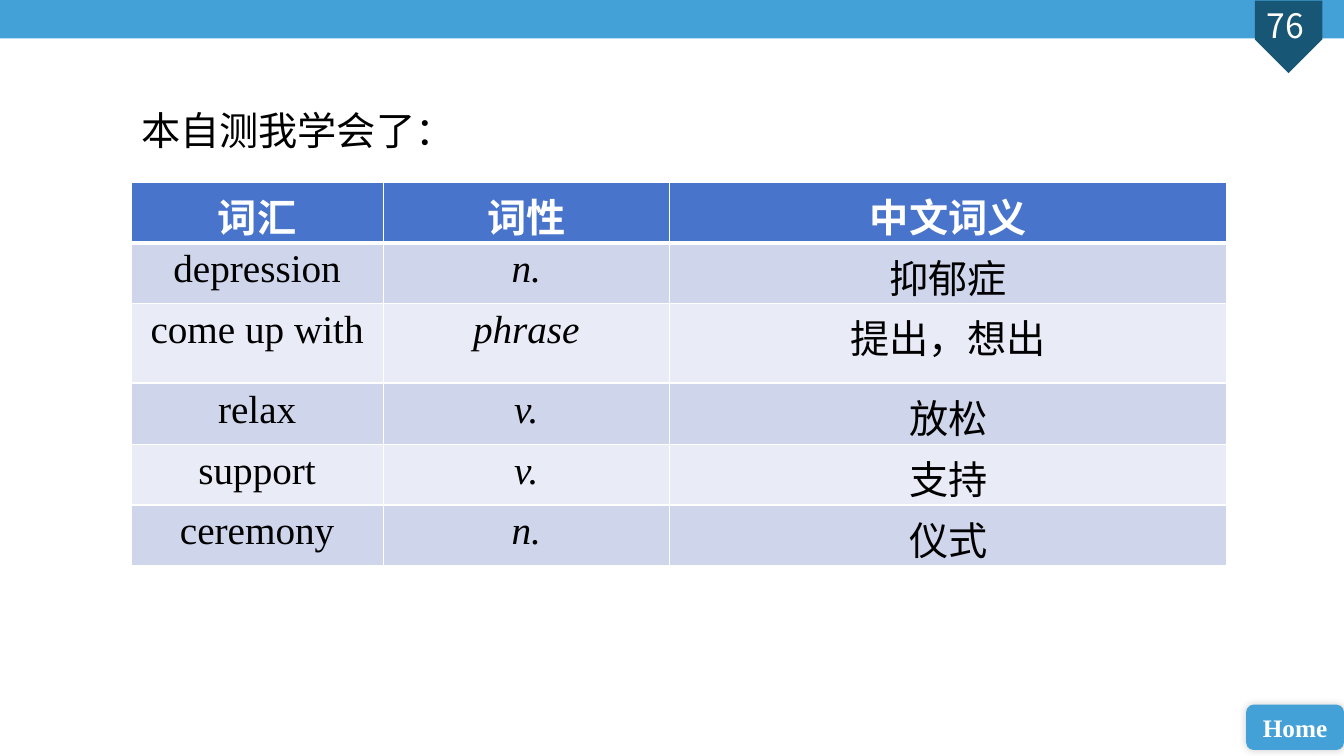
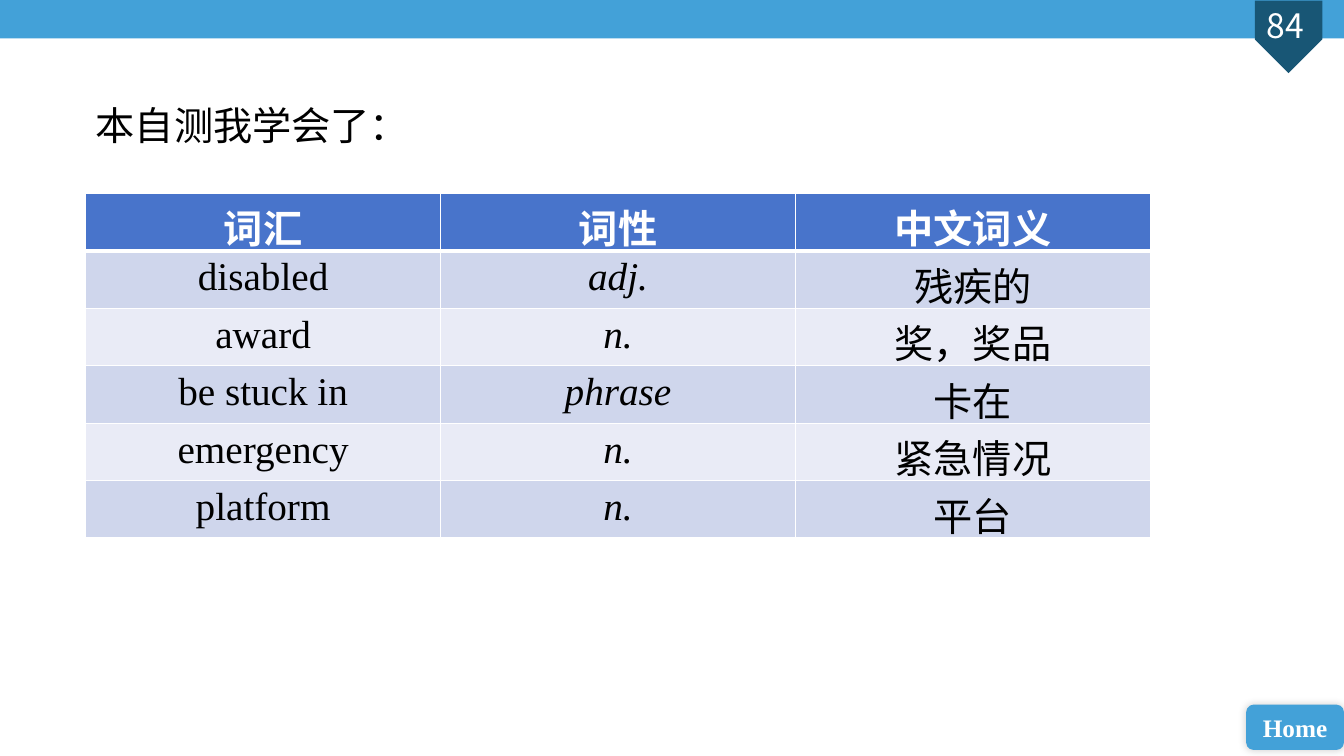
from dataclasses import dataclass

import pptx
import pptx.dml.color
import pptx.enum.shapes
import pptx.enum.text
import pptx.oxml
import pptx.oxml.ns
import pptx.util
from pptx.dml.color import RGBColor
from pptx.util import Inches

SKY = RGBColor(0x43, 0xA1, 0xD8)
NAVY = RGBColor(0x18, 0x56, 0x75)
HEADER_BLUE = RGBColor(0x48, 0x74, 0xCB)
DARK_STRIPE = RGBColor(0xCF, 0xD6, 0xEC)
LIGHT_STRIPE = RGBColor(0xE9, 0xEB, 0xF6)
WHITE = RGBColor(0xFF, 0xFF, 0xFF)
BLACK = RGBColor(0x00, 0x00, 0x00)

SERIF = "Times New Roman"
SANS = "Calibri"
CHINESE = "Noto Sans CJK SC"

TITLE = "本自测我学会了："
HEADERS = ("词汇", "词性", "中文词义")
PART_OF_SPEECH = 1

SHAPE = pptx.enum.shapes.MSO_SHAPE
ALIGN = pptx.enum.text.PP_ALIGN
ANCHOR = pptx.enum.text.MSO_ANCHOR


@dataclass(frozen=True)
class Box:
    left: float
    top: float
    width: float
    height: float

    def lengths(self) -> tuple:
        return tuple(Inches(value) for value in (self.left, self.top, self.width, self.height))


@dataclass(frozen=True)
class VocabularyPage:
    number: int
    title_left: float
    title_top: float
    table_top: float
    column_widths: tuple[float, ...]
    row_heights: tuple[float, ...]
    words: tuple[tuple[str, str, str], ...]


PAGES = (
    VocabularyPage(
        76, 1.3, 1, 1.81, (2.5, 2.84, 5.53), (0.6, 0.6, 0.79, 0.61, 0.6, 0.6),
        (
            ("depression", "n.", "抑郁症"),
            ("come up with", "phrase", "提出，想出"),
            ("relax", "v.", "放松"),
            ("support", "v.", "支持"),
            ("ceremony", "n.", "仪式"),
        ),
    ),
    VocabularyPage(
        84, 0.85, 0.95, 1.92, (3.52,) * 3, (0.57,) * 6,
        (
            ("disabled", "adj.", "残疾的"),
            ("award", "n.", "奖，奖品"),
            ("be stuck in", "phrase", "卡在"),
            ("emergency", "n.", "紧急情况"),
            ("platform", "n.", "平台"),
        ),
    ),
)


def add_element(parent, tag: str, **attributes):
    element = parent.makeelement(pptx.oxml.ns.qn(tag), attributes)
    parent.append(element)
    return element


def write_text(text_frame, text: str, *, size: float, font: str, color: RGBColor,
               bold: bool = False, italic: bool = False, align=ALIGN.CENTER) -> None:
    paragraph = text_frame.paragraphs[0]
    paragraph.alignment = align
    run = paragraph.add_run()
    run.text = text
    run.font.size = pptx.util.Pt(size)
    run.font.name = font
    run.font.bold = bold
    run.font.italic = italic
    run.font.color.rgb = color
    add_element(run.font._element, "a:ea", typeface=CHINESE)


def add_filled_shape(slide, kind, box: Box, color: RGBColor):
    shape = slide.shapes.add_shape(kind, *box.lengths())
    shape.shadow.inherit = False
    shape.fill.solid()
    shape.fill.fore_color.rgb = color
    shape.line.fill.background()
    return shape


def add_soft_shadow(shape) -> None:
    effects = shape._element.spPr.find(pptx.oxml.ns.qn("a:effectLst"))
    shadow = add_element(effects, "a:outerShdw", blurRad=str(pptx.util.Pt(6)),
                         dist="0", dir="18900000", algn="bl", rotWithShape="0")
    add_element(add_element(shadow, "a:srgbClr", val=str(BLACK)), "a:alpha", val="20000")


def add_page_frame(slide, number: int) -> None:
    add_filled_shape(slide, SHAPE.RECTANGLE, Box(0, 0, 13.33, 0.38), SKY)
    marker = add_filled_shape(slide, SHAPE.PENTAGON, Box(12.42, 0.03, 0.72, 0.67), NAVY)
    marker.rotation = 90
    number_box = slide.shapes.add_textbox(*Box(12.26, 0, 0.98, 0.5).lengths())
    number_box.text_frame.word_wrap = True
    number_box.text_frame.vertical_anchor = ANCHOR.MIDDLE
    write_text(number_box.text_frame, str(number), size=24, font=CHINESE, color=WHITE)
    home = add_filled_shape(slide, SHAPE.ROUNDED_RECTANGLE, Box(12.36, 6.99, 0.97, 0.45), SKY)
    add_soft_shadow(home)
    home.text_frame.vertical_anchor = ANCHOR.MIDDLE
    write_text(home.text_frame, "Home", size=18, font=SERIF, color=WHITE, bold=True)


def place_title(slide, page: VocabularyPage) -> None:
    title = slide.shapes.title
    box = Box(page.title_left, page.title_top, 3.87, 0.57)
    title.left, title.top, title.width, title.height = box.lengths()
    title.text_frame.word_wrap = True
    title.text_frame.auto_size = pptx.enum.text.MSO_AUTO_SIZE.NONE
    title.text_frame.vertical_anchor = ANCHOR.MIDDLE
    write_text(title.text_frame, TITLE, size=28, font=SANS, color=BLACK, align=ALIGN.LEFT)


def set_borders(cell, top: float, bottom: float) -> None:
    properties = cell._tc.get_or_add_tcPr()
    for tag, width in (("a:lnL", 1), ("a:lnR", 1), ("a:lnT", top), ("a:lnB", bottom)):
        line = add_element(properties, tag, w=str(pptx.util.Pt(width)))
        add_element(add_element(line, "a:solidFill"), "a:srgbClr", val=str(WHITE))


def format_cell(cell, text: str, row: int, column: int) -> None:
    is_header = row == 0
    set_borders(cell, top=3 if row == 1 else 1, bottom=3 if is_header else 1)
    cell.fill.solid()
    stripe = DARK_STRIPE if row % 2 else LIGHT_STRIPE
    cell.fill.fore_color.rgb = HEADER_BLUE if is_header else stripe
    cell.margin_top = Inches(0.05)
    cell.margin_bottom = Inches(-0.05)
    write_text(cell.text_frame, text, size=28, font=SERIF,
               color=WHITE if is_header else BLACK, bold=is_header,
               italic=not is_header and column == PART_OF_SPEECH)


def add_vocabulary_table(slide, page: VocabularyPage) -> None:
    rows = (HEADERS, *page.words)
    box = Box(page.title_left, page.table_top, sum(page.column_widths), sum(page.row_heights))
    table = slide.shapes.add_table(len(rows), len(HEADERS), *box.lengths()).table
    table.horz_banding = False
    for column, width in zip(table.columns, page.column_widths):
        column.width = Inches(width)
    for row, height in zip(table.rows, page.row_heights):
        row.height = Inches(height)
    for row_index, texts in enumerate(rows):
        for column_index, text in enumerate(texts):
            format_cell(table.cell(row_index, column_index), text, row_index, column_index)


def main() -> None:
    presentation = pptx.Presentation()
    presentation.slide_width = Inches(13.33)
    presentation.slide_height = Inches(7.5)
    title_only = presentation.slide_layouts.get_by_name("Title Only")
    for page in PAGES:
        slide = presentation.slides.add_slide(title_only)
        add_page_frame(slide, page.number)
        add_vocabulary_table(slide, page)
        place_title(slide, page)
    presentation.save("out.pptx")


if __name__ == "__main__":
    main()
